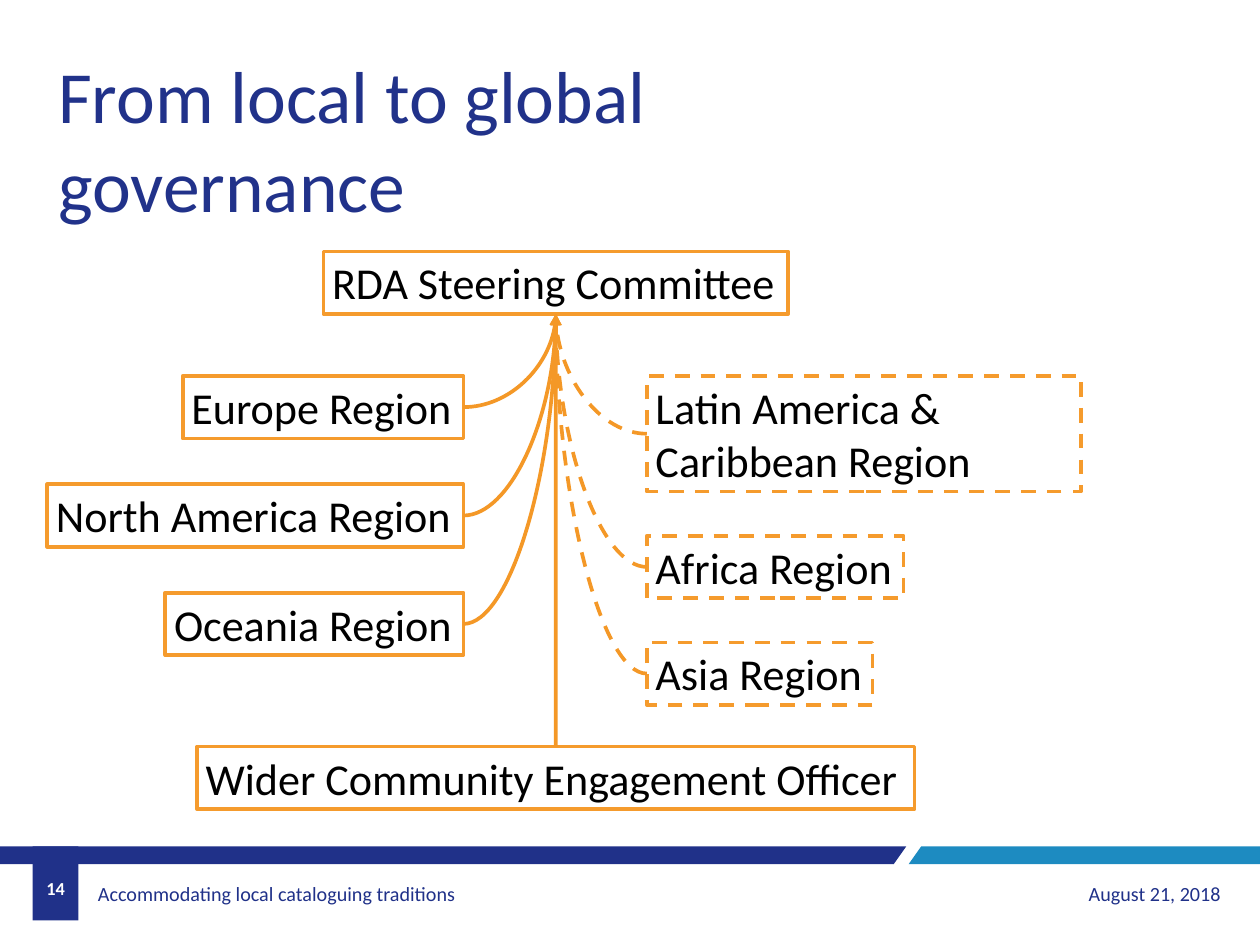
from pptx import Presentation
from pptx.dml.color import RGBColor
from pptx.enum.dml import MSO_LINE
from pptx.enum.shapes import MSO_CONNECTOR, MSO_SHAPE
from pptx.enum.text import MSO_ANCHOR, MSO_AUTO_SIZE, PP_ALIGN
from pptx.oxml.ns import qn
from pptx.util import Cm, Pt
from lxml import etree

NAVY = RGBColor(0x20, 0x31, 0x89)
TITLE_NAVY = RGBColor(0x21, 0x32, 0x8A)
BLUE = RGBColor(0x1D, 0x8B, 0xC1)
BOX_ORANGE = RGBColor(0xF5, 0x9B, 0x2D)
ARROW_ORANGE = RGBColor(0xF4, 0x98, 0x27)
BLACK = RGBColor(0, 0, 0)
WHITE = RGBColor(0xFF, 0xFF, 0xFF)
DASH = MSO_LINE.DASH
CURVE, STRAIGHT = MSO_CONNECTOR.CURVE, MSO_CONNECTOR.STRAIGHT
RECTANGLE = MSO_SHAPE.RECTANGLE
TOP, MIDDLE = MSO_ANCHOR.TOP, MSO_ANCHOR.MIDDLE
LEFT, CENTER, RIGHT = PP_ALIGN.LEFT, PP_ALIGN.CENTER, PP_ALIGN.RIGHT
FIT_SHAPE, NO_FIT = MSO_AUTO_SIZE.SHAPE_TO_FIT_TEXT, MSO_AUTO_SIZE.NONE
SITE_TOP, SITE_LEFT, SITE_BOTTOM, SITE_RIGHT = range(4)


def write(frame, text, size, color, align=LEFT, anchor=MIDDLE, bold=False):
    frame.text = text
    frame.vertical_anchor = anchor
    for paragraph in frame.paragraphs:
        paragraph.alignment = align
        for run in paragraph.runs:
            run.font.name = "Calibri"
            run.font.size = Pt(size)
            run.font.bold = bold
            run.font.color.rgb = color


def add_arrow(kind, source, source_site, target, dash=None):
    arrow = slide.shapes.add_connector(kind, 0, 0, 0, 0)
    arrow.begin_connect(source, source_site)
    arrow.end_connect(target, SITE_BOTTOM)
    arrow.line.color.rgb = ARROW_ORANGE
    arrow.line.width = Pt(3)
    if dash:
        arrow.line.dash_style = dash
    properties = arrow.element.spPr
    if kind == CURVE:
        properties.find(qn("a:prstGeom")).set("prst", "curvedConnector2")
    etree.SubElement(arrow.line._get_or_add_ln(), qn("a:tailEnd"), type="triangle")
    etree.SubElement(properties, qn("a:effectLst"))


prs = Presentation()
prs.slide_width, prs.slide_height = Cm(36.27), Cm(27.2)
slide = prs.slides.add_slide(prs.slide_layouts[5])

# Title
title = slide.shapes.title
title.left, title.top, title.width, title.height = Cm(1.42), Cm(1.32), Cm(19.89), Cm(5.38)
write(title.text_frame, "From local to global\ngovernance", 60, TITLE_NAVY, anchor=TOP)
title.text_frame.word_wrap = True
title.text_frame.auto_size = NO_FIT

# Footer bars with a slanted gap
BAR_TOP, BAR_BOTTOM = 24.36, 24.87
bars = [
    (NAVY, [(0, BAR_TOP), (26.09, BAR_TOP), (25.73, BAR_BOTTOM), (0, BAR_BOTTOM)]),
    (BLUE, [(26.52, BAR_TOP), (36.27, BAR_TOP), (36.27, BAR_BOTTOM), (26.16, BAR_BOTTOM)]),
]
for color, corners in bars:
    points = [(Cm(x), Cm(y)) for x, y in corners]
    builder = slide.shapes.build_freeform(*points[0])
    builder.add_line_segments(points[1:], close=True)
    bar = builder.convert_to_shape()
    bar.shadow.inherit = False
    bar.fill.solid()
    bar.fill.fore_color.rgb = color
    bar.line.fill.background()

# Slide number
number = slide.shapes.add_shape(RECTANGLE, Cm(0.94), Cm(BAR_TOP), Cm(1.32), Cm(2.13))
number.shadow.inherit = False
number.fill.solid()
number.fill.fore_color.rgb = NAVY
number.line.fill.background()
number_frame = number.text_frame
number_frame.margin_left = number_frame.margin_right = number_frame.margin_bottom = 0
number_frame.margin_top = Cm(0.28)
write(number_frame, "14", 14.9, WHITE, CENTER, bold=True)

# Footer texts
footer_texts = [
    ("Accommodating local cataloguing traditions", 2.64, 11.05, 0.18, LEFT),
    ("August 21, 2018", 26.09, 9.3, 0.25, RIGHT),
]
for text, left, width, margin, align in footer_texts:
    footer = slide.shapes.add_textbox(Cm(left), Cm(25.02), Cm(width), Cm(1.4))
    footer.text_frame.word_wrap = True
    footer.text_frame.margin_left = footer.text_frame.margin_right = Cm(margin)
    write(footer.text_frame, text, 16.4, NAVY, align)

# Organisation boxes: centred on the spine, or flush with it on either side
SPINE, LEFT_EDGE, RIGHT_EDGE = 16, 13.34, 18.62
ROW, STEP, HEIGHT = 10.82, 3.12, 1.8
bodies = [
    ("RDA Steering Committee", CENTER, 7.24, 13.38, HEIGHT),
    ("Europe Region", LEFT, ROW, 8.08, HEIGHT),
    ("North America Region", LEFT, ROW + STEP, 11.98, HEIGHT),
    ("Oceania Region", LEFT, ROW + 2 * STEP, 8.58, HEIGHT),
    ("Latin America & Caribbean Region", RIGHT, ROW, 12.5, 3.33),
    ("Africa Region", RIGHT, 15.42, 7.39, HEIGHT),
    ("Asia Region", RIGHT, 18.49, 6.5, HEIGHT),
    ("Wider Community Engagement Officer", CENTER, 21.49, 20.66, HEIGHT),
]
boxes = []
for name, side, top, width, height in bodies:
    left = {LEFT: LEFT_EDGE - width, RIGHT: RIGHT_EDGE, CENTER: SPINE - width / 2}[side]
    box = slide.shapes.add_shape(RECTANGLE, Cm(left), Cm(top), Cm(width), Cm(height))
    box.shadow.inherit = False
    box.fill.background()
    box.line.color.rgb = BOX_ORANGE
    box.line.width = Pt(3)
    if side == RIGHT:
        box.line.dash_style = DASH
    write(box.text_frame, name, 36, BLACK, anchor=TOP)
    box.text_frame.word_wrap = height > HEIGHT
    box.text_frame.auto_size = FIT_SHAPE
    boxes.append((box, side))

# Arrows up to the committee
committee = boxes[0][0]
for box, side in boxes[1:]:
    if side == LEFT:
        add_arrow(CURVE, box, SITE_RIGHT, committee)
    elif side == RIGHT:
        add_arrow(CURVE, box, SITE_LEFT, committee, DASH)
    else:
        add_arrow(STRAIGHT, box, SITE_TOP, committee)

prs.save("out.pptx")
